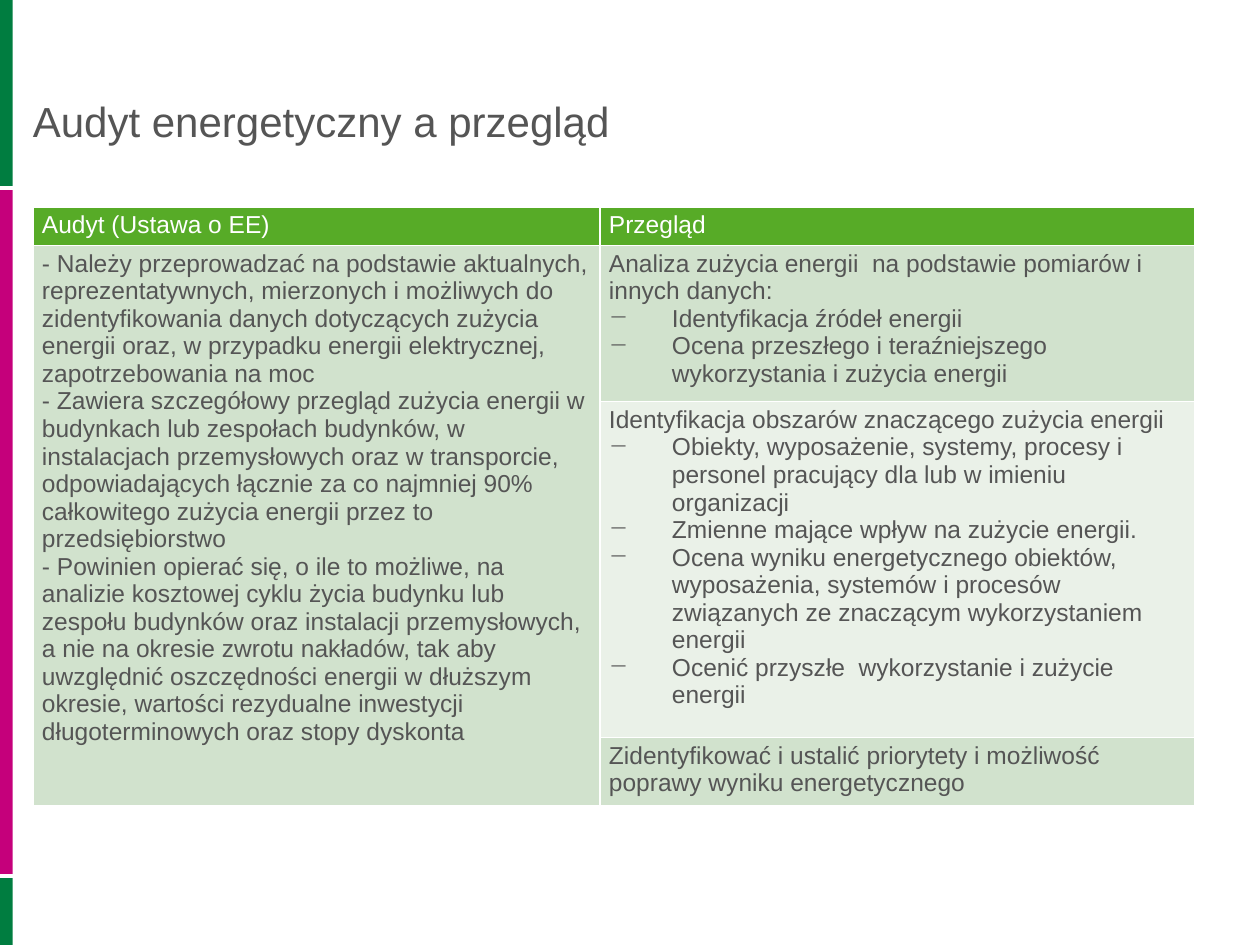
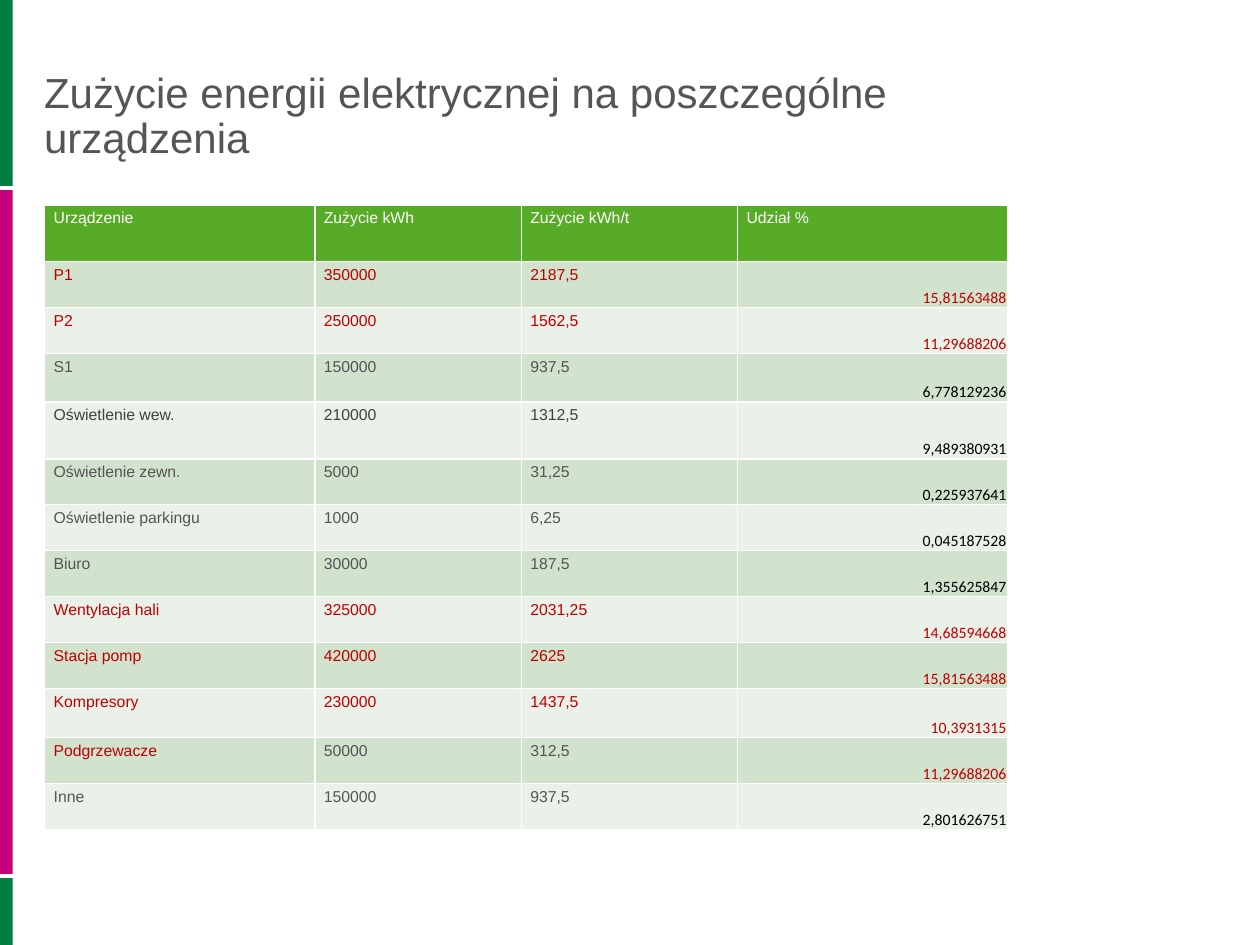
from lxml import etree
from pptx import Presentation
from pptx.dml.color import RGBColor
from pptx.enum.shapes import MSO_CONNECTOR, MSO_SHAPE
from pptx.enum.text import MSO_ANCHOR, PP_ALIGN
from pptx.oxml.ns import qn
from pptx.util import Pt

STRAIGHT = MSO_CONNECTOR.STRAIGHT
RECTANGLE = MSO_SHAPE.RECTANGLE
TOP, MIDDLE, BOTTOM = MSO_ANCHOR.TOP, MSO_ANCHOR.MIDDLE, MSO_ANCHOR.BOTTOM
LEFT, RIGHT = PP_ALIGN.LEFT, PP_ALIGN.RIGHT

SLIDE_WIDTH, SLIDE_HEIGHT = 720, 540
GREEN, MAGENTA, WHITE = "007D40", "C5007B", "FFFFFF"
HEADER_FILL, BAND_FILLS = "57AB27", ("D1E2CD", "EAF1E8")
GREY, DARK, BLACK, RED = "555555", "404040", "000000", "C00000"

SIDE_WIDTH = 7.2
SIDE_BANDS = [(108.7, 391, MAGENTA), (500.4, 39.6, GREEN), (0, 107.3, GREEN)]
DIVIDERS = [500.4, 107.3]
CELL_INSETS = (5.2, 2.6, 5.2, 2.6)
SHARE_INSETS = (0.75, 0.75, 0.75, 0)
BULLET_INDENT = 36

# Each cell paragraph is (text, has a dash bullet).
AUDIT_TITLE = "Audyt energetyczny a przegląd"
AUDIT_HEADERS = ["Audyt (Ustawa o EE)", "Przegląd"]
AUDIT_POINTS = [
    ("- Należy przeprowadzać na podstawie aktualnych, reprezentatywnych, "
     "mierzonych i możliwych do zidentyfikowania danych dotyczących zużycia "
     "energii oraz, w przypadku energii elektrycznej, zapotrzebowania na moc", False),
    ("- Zawiera szczegółowy przegląd zużycia energii w budynkach lub zespołach "
     "budynków, w instalacjach przemysłowych oraz w transporcie, odpowiadających "
     "łącznie za co najmniej 90% całkowitego zużycia energii przez to "
     "przedsiębiorstwo", False),
    ("- Powinien opierać się, o ile to możliwe, na analizie kosztowej cyklu życia "
     "budynku lub zespołu budynków oraz instalacji przemysłowych, a nie na okresie "
     "zwrotu nakładów, tak aby uwzględnić oszczędności energii w dłuższym okresie, "
     "wartości rezydualne inwestycji długoterminowych oraz stopy dyskonta", False),
]
REVIEW_STEPS = [
    [("Analiza zużycia energii  na podstawie pomiarów i innych danych:", False),
     ("Identyfikacja źródeł energii", True),
     ("Ocena przeszłego i teraźniejszego wykorzystania i zużycia energii", True)],
    [("Identyfikacja obszarów znaczącego zużycia energii", False),
     ("Obiekty, wyposażenie, systemy, procesy i personel pracujący dla lub w "
      "imieniu organizacji", True),
     ("Zmienne mające wpływ na zużycie energii.", True),
     ("Ocena wyniku energetycznego obiektów, wyposażenia, systemów i procesów "
      "związanych ze znaczącym wykorzystaniem energii", True),
     ("Ocenić przyszłe  wykorzystanie i zużycie energii", True)],
    [("Zidentyfikować i ustalić priorytety i możliwość poprawy wyniku "
      "energetycznego", False)],
]
AUDIT_COLUMNS = [324, 339.8]
AUDIT_ROWS = [21.7, 86.3, 192, 37.2]

USAGE_TITLE = "Zużycie energii elektrycznej na poszczególne urządzenia"
USAGE_HEADERS = ["Urządzenie", "Zużycie kWh", "Zużycie kWh/t", "Udział %"]
# Colours of the name, the two usage figures and the share.
HIGH = (RED, RED, RED, RED)
NORMAL = (GREY, GREY, GREY, BLACK)
LIGHTING = (DARK, DARK, DARK, BLACK)
MIXED = (RED, GREY, GREY, RED)
USAGE = [
    (("P1", "350000", "2187,5", "15,81563488"), HIGH),
    (("P2", "250000", "1562,5", "11,29688206"), HIGH),
    (("S1", "150000", "937,5", "6,778129236"), NORMAL),
    (("Oświetlenie wew.", "210000", "1312,5", "9,489380931"), LIGHTING),
    (("Oświetlenie zewn.", "5000", "31,25", "0,225937641"), NORMAL),
    (("Oświetlenie parkingu", "1000", "6,25", "0,045187528"), NORMAL),
    (("Biuro", "30000", "187,5", "1,355625847"), NORMAL),
    (("Wentylacja hali", "325000", "2031,25", "14,68594668"), HIGH),
    (("Stacja pomp", "420000", "2625", "15,81563488"), HIGH),
    (("Kompresory", "230000", "1437,5", "10,3931315"), HIGH),
    (("Podgrzewacze", "50000", "312,5", "11,29688206"), MIXED),
    (("Inne", "150000", "937,5", "2,801626751"), NORMAL),
]
USAGE_COLUMNS = [154.4, 118, 123.6, 154.4]
ROW, MEDIUM_ROW, TALL_ROW = 26.3, 27.8, 32.4
USAGE_ROWS = [TALL_ROW, ROW, ROW, MEDIUM_ROW, TALL_ROW, *[ROW] * 5,
              MEDIUM_ROW, ROW, ROW]


def rgb(value):
    return RGBColor.from_string(value)


def write(para, text, size=14, color=GREY, font="Arial", align=LEFT, bullet=False):
    if bullet:
        properties = para._p.get_or_add_pPr()
        properties.set("marL", str(Pt(BULLET_INDENT)))
        properties.set("indent", str(-Pt(BULLET_INDENT)))
        etree.SubElement(properties, qn("a:buChar"), char="−")
    para.alignment = align
    span = para.add_run()
    span.text = text
    span.font.size = Pt(size)
    span.font.name = font
    span.font.bold = False
    span.font.color.rgb = rgb(color)


def set_insets(target, insets):
    (target.margin_left, target.margin_top,
     target.margin_right, target.margin_bottom) = map(Pt, insets)


def style_cell(cell, fill, insets=CELL_INSETS, anchor=TOP):
    properties = cell._tc.get_or_add_tcPr()
    for side in ("lnL", "lnR", "lnT", "lnB"):
        border = etree.SubElement(properties, qn("a:" + side), w=str(Pt(1)))
        paint = etree.SubElement(border, qn("a:solidFill"))
        etree.SubElement(paint, qn("a:srgbClr"), val=WHITE)
    cell.fill.solid()
    cell.fill.fore_color.rgb = rgb(fill)
    set_insets(cell, insets)
    cell.vertical_anchor = anchor


def fill_cell(cell, items, **text_format):
    """Write (text, bullet) items as the paragraphs of a cell."""
    frame = cell.text_frame
    for index, (text, bullet) in enumerate(items):
        para = frame.add_paragraph() if index else frame.paragraphs[0]
        write(para, text, bullet=bullet, **text_format)


def add_table(page, left, top, columns, rows, headers, size):
    """Add a table with its sizes and header row set."""
    frame = page.shapes.add_table(len(rows), len(columns), Pt(left), Pt(top),
                                  Pt(sum(columns)), Pt(sum(rows)))
    table = frame.table
    table.horz_banding = False
    for column, width in zip(table.columns, columns):
        column.width = Pt(width)
    for row, height in zip(table.rows, rows):
        row.height = Pt(height)
    for cell, text in zip(table.rows[0].cells, headers):
        style_cell(cell, HEADER_FILL)
        write(cell.text_frame.paragraphs[0], text, size=size, color=WHITE)
    return table


def add_page(deck, title, left, top, width, height):
    """Add a blank page with the side bands, dividers and title."""
    page = deck.slides.add_slide(deck.slide_layouts[6])
    for band_top, band_height, color in SIDE_BANDS:
        band = page.shapes.add_shape(RECTANGLE, 0, Pt(band_top),
                                     Pt(SIDE_WIDTH), Pt(band_height))
        band.shadow.inherit = False
        band.fill.solid()
        band.fill.fore_color.rgb = rgb(color)
        band.line.fill.background()
    for y in DIVIDERS:
        divider = page.shapes.add_connector(STRAIGHT, 0, Pt(y), Pt(SLIDE_WIDTH), Pt(y))
        divider.line.color.rgb = rgb(WHITE)
        divider.line.width = Pt(2.25)
        etree.SubElement(divider._element.spPr, qn("a:effectLst"))
    box = page.shapes.add_textbox(Pt(left), Pt(top), Pt(width), Pt(height))
    frame = box.text_frame
    frame.word_wrap = True
    frame.vertical_anchor = MIDDLE
    set_insets(frame, (0, 0, 0, 0))
    write(frame.paragraphs[0], title, size=24)
    frame.paragraphs[0].line_spacing = 0.9
    return page


def build_audit_page(deck):
    page = add_page(deck, AUDIT_TITLE, 18.8, 57.6, 440, 26)
    table = add_table(page, 18.8, 118.3, AUDIT_COLUMNS, AUDIT_ROWS, AUDIT_HEADERS, 14)
    table.cell(1, 0).merge(table.cell(len(REVIEW_STEPS), 0))
    for index, step in enumerate(REVIEW_STEPS):
        audit, review = table.rows[index + 1].cells
        style_cell(audit, BAND_FILLS[0])
        style_cell(review, BAND_FILLS[index % 2])
        fill_cell(review, step)
    fill_cell(table.cell(1, 0), AUDIT_POINTS)


def build_usage_page(deck):
    page = add_page(deck, USAGE_TITLE, 25.2, 41, 483, 52.5)
    table = add_table(page, 25.5, 117, USAGE_COLUMNS, USAGE_ROWS, USAGE_HEADERS, 9)
    for index, (values, colors) in enumerate(USAGE):
        fill = BAND_FILLS[index % 2]
        cells = list(table.rows[index + 1].cells)
        for cell, value, color in zip(cells[:-1], values, colors):
            style_cell(cell, fill)
            fill_cell(cell, [(value, False)], size=9, color=color)
        style_cell(cells[-1], fill, SHARE_INSETS, BOTTOM)
        fill_cell(cells[-1], [(values[-1], False)], size=9, color=colors[-1],
                  font="Calibri", align=RIGHT)


def main():
    deck = Presentation()
    deck.slide_width, deck.slide_height = Pt(SLIDE_WIDTH), Pt(SLIDE_HEIGHT)
    build_audit_page(deck)
    build_usage_page(deck)
    deck.save("out.pptx")


if __name__ == "__main__":
    main()
